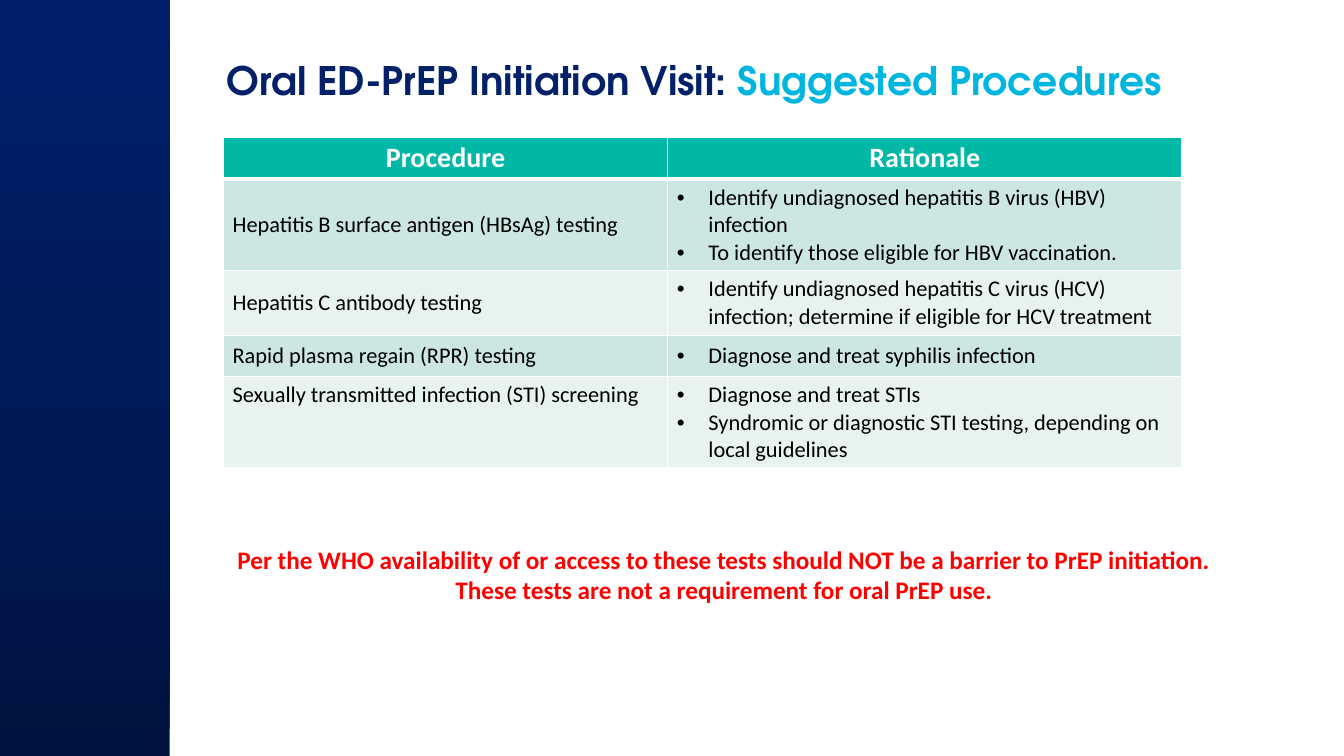
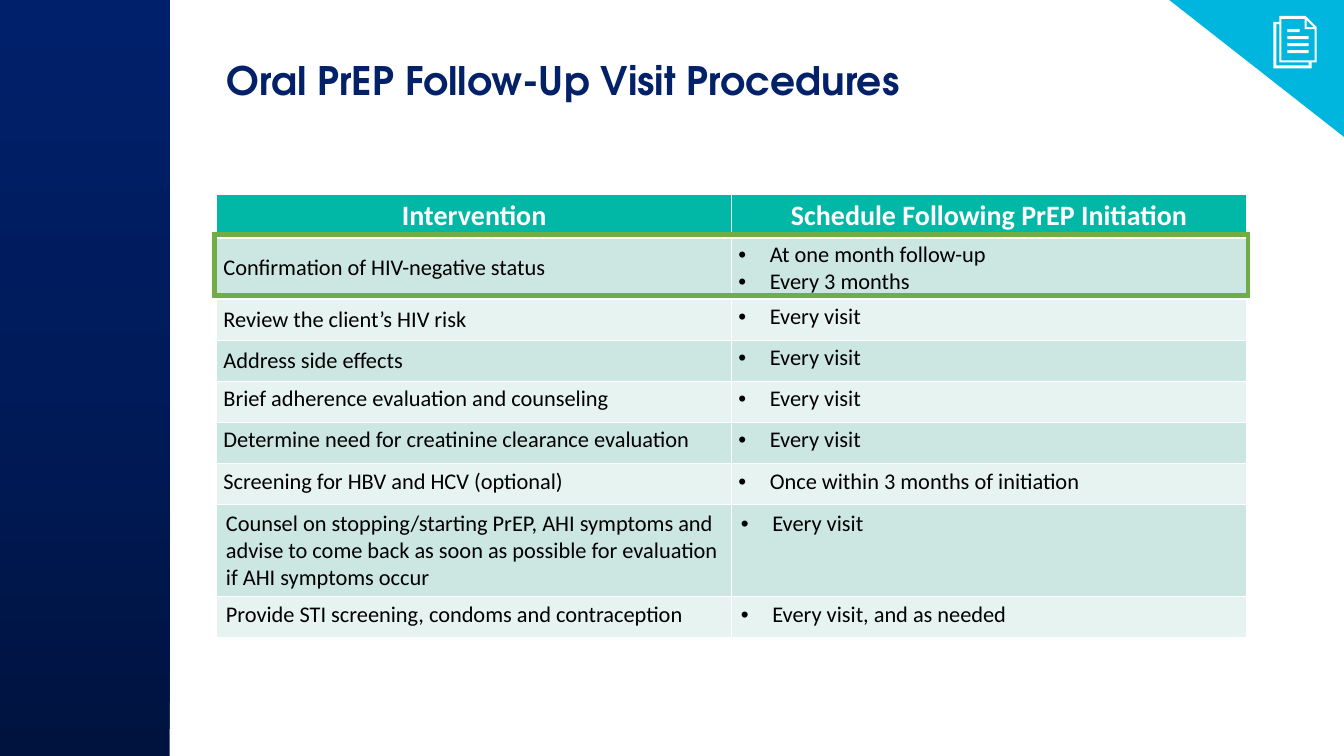
from copy import deepcopy
from dataclasses import dataclass

from lxml import etree
from pptx import Presentation
from pptx import util as u
from pptx.dml.color import RGBColor
from pptx.enum import shapes, text
from pptx.oxml.ns import qn

# The slide is a grid of 160 square columns by 90 rows.
COLUMNS, ROWS = 160, 90
CELL = u.Inches(7.5) / ROWS

COLORS = {
    "navy": "022169", "cyan": "00B5DE", "teal": "00B8A5", "white": "FFFFFF",
    "black": "000000", "red": "FF0000", "green": "70AD47",
    "band_odd": "CCE6E1", "band_even": "E7F3F0",
    "side_bottom": "00133F", "side_middle": "001B5A", "side_top": "00206B",
}
TITLE_FONT, BODY_FONT = "TeX Gyre Adventor", "Calibri"
TIGHT, ROOMY = (0.8, 0.5), (1.1, 0.6)
TOP, MIDDLE = text.MSO_ANCHOR.TOP, text.MSO_ANCHOR.MIDDLE
CENTER = text.PP_ALIGN.CENTER
HEADER_HEIGHT = LINE_ROW = 4.9
THREE_LINE_ROW = 10.9
BULLET_INDENT = 3.75


@dataclass
class Row:
    label: str
    bullets: list
    height: float = LINE_ROW
    label_anchor: text.MSO_ANCHOR = TOP
    bullet_anchor: text.MSO_ANCHOR = TOP
    inset: tuple = TIGHT


def grid(*counts):
    return [u.Emu(round(count * CELL)) for count in counts]


def color(name):
    return RGBColor.from_string(COLORS[name])


def add_run(paragraph, words, size, tint, bold=False, font=BODY_FONT):
    run = paragraph.add_run()
    run.text = words
    run.font.size, run.font.bold, run.font.name = u.Pt(size), bold, font
    run.font.color.rgb = color(tint)


def add_filled(slide, kind, box, tint):
    shape = slide.shapes.add_shape(kind, *grid(*box))
    shape.shadow.inherit = False
    shape.fill.solid()
    shape.fill.fore_color.rgb = color(tint)
    shape.line.fill.background()
    return shape


def add_text_frame(slide, box):
    frame = slide.shapes.add_textbox(*grid(*box)).text_frame
    frame.word_wrap = True
    return frame


def add_side_band(slide):
    band = add_filled(slide, shapes.MSO_SHAPE.RECTANGLE, (0, 0, 20.2, ROWS), "side_top")
    band.fill.gradient()
    band.fill.gradient_angle = 90
    stop_list = band.fill._xPr.find(".//" + qn("a:gsLst"))
    stop_list.insert(1, deepcopy(stop_list[0]))
    tints = ("side_bottom", "side_middle", "side_top")
    for i, (stop, tint) in enumerate(zip(band.fill.gradient_stops, tints)):
        stop.position = i / 2
        stop.color.rgb = color(tint)


def add_title(slide, *parts):
    paragraph = add_text_frame(slide, (25.8, 6.8, 120, 11)).paragraphs[0]
    paragraph.line_spacing = 0.9
    for words, tint in parts:
        add_run(paragraph, words, 28, tint, True, TITLE_FONT)


def start_slide(deck, *title_parts):
    slide = deck.slides.add_slide(deck.slide_layouts[6])
    add_side_band(slide)
    add_title(slide, *title_parts)
    return slide


def add_borders(cell, widths):
    """Draw white edges, widths in points: left, right, top, bottom."""
    properties = cell._tc.get_or_add_tcPr()
    for i, (side, width) in enumerate(zip("LRTB", widths)):
        line = etree.Element(qn(f"a:ln{side}"), w=str(u.Pt(width)))
        fill = etree.SubElement(line, qn("a:solidFill"))
        etree.SubElement(fill, qn("a:srgbClr"), val=COLORS["white"])
        properties.insert(i, line)


def style_cell(cell, tint, anchor, inset, widths):
    cell.fill.solid()
    cell.fill.fore_color.rgb = color(tint)
    cell.vertical_anchor = anchor
    cell.margin_left, cell.margin_top = grid(*inset)
    cell.margin_right, cell.margin_bottom = grid(*inset)
    add_borders(cell, widths)


def add_bullet(paragraph):
    properties = paragraph._p.get_or_add_pPr()
    indent, = grid(BULLET_INDENT)
    properties.set("marL", str(indent))
    properties.set("indent", str(-indent))
    etree.SubElement(properties, qn("a:buFont"), typeface="Arial")
    etree.SubElement(properties, qn("a:buChar"), char="•")


def fill_bullets(frame, bullets):
    for i, words in enumerate(bullets):
        paragraph = frame.add_paragraph() if i else frame.paragraphs[0]
        add_bullet(paragraph)
        add_run(paragraph, words, 16, "black")


def add_visit_table(slide, left, top, widths, headings, rows):
    heights = [HEADER_HEIGHT] + [row.height for row in rows]
    table = slide.shapes.add_table(
        len(heights), len(widths), *grid(left, top, sum(widths), sum(heights))).table
    for column, width in zip(table.columns, grid(*widths)):
        column.width = width
    for table_row, height in zip(table.rows, grid(*heights)):
        table_row.height = height
    for i, heading in enumerate(headings):
        cell = table.cell(0, i)
        style_cell(cell, "teal", MIDDLE, TIGHT, (1, 1, 1, 3))
        paragraph = cell.text_frame.paragraphs[0]
        paragraph.alignment = CENTER
        add_run(paragraph, heading, 20, "white", True)
    for i, row in enumerate(rows, 1):
        tint = "band_odd" if i % 2 else "band_even"
        edges = (1, 1, 3 if i == 1 else 1, 1)
        label, schedule = table.cell(i, 0), table.cell(i, 1)
        style_cell(label, tint, row.label_anchor, row.inset, edges)
        style_cell(schedule, tint, row.bullet_anchor, row.inset, edges)
        add_run(label.text_frame.paragraphs[0], row.label, 16, "black")
        fill_bullets(schedule.text_frame, row.bullets)


def add_note(slide, lines):
    frame = add_text_frame(slide, (26.6, 64.2, 119.2, 8.5))
    for i, words in enumerate(lines):
        paragraph = frame.add_paragraph() if i else frame.paragraphs[0]
        paragraph.alignment = CENTER
        add_run(paragraph, words, 18, "red", True)


def bar(right, top):
    return [(14, top), (right, top), (right, top + 3), (14, top + 3)]


def add_document_icon(slide):
    """Draw stacked pages; contours inside the outline alternate hole and fill."""
    outline = [(7, 0), (32, 0), (43, 11), (43, 46), (38, 46), (38, 52),
               (0, 52), (0, 6), (6, 6), (6, 0)]
    front_page = [(8, 3), (31, 3), (31, 13), (41, 13), (41, 44), (8, 44)]
    fold = [(33, 4), (40, 11), (33, 11)]
    back_page = [(3, 8), (6, 8), (6, 46), (35, 46), (35, 49), (3, 49)]
    text_lines = [bar(26 if i == 0 else 35, 13 + 7 * i) for i in range(4)]
    builder = slide.shapes.build_freeform(*outline[0], scale=u.Inches(0.01))
    builder.add_line_segments(outline[1:])
    for contour in [front_page, fold, back_page, *text_lines]:
        builder.move_to(*contour[0])
        builder.add_line_segments(contour[1:])
    icon = builder.convert_to_shape(*grid(151.6, 1.9))
    icon.shadow.inherit = False
    icon.fill.solid()
    icon.fill.fore_color.rgb = color("white")
    icon.line.fill.background()


def add_corner(slide):
    corner = add_filled(slide, shapes.MSO_SHAPE.RIGHT_TRIANGLE,
                        (139.2, 0, COLUMNS - 139.2, 16.3), "cyan")
    corner.rotation = 180
    add_document_icon(slide)


def add_highlight(slide):
    highlight = add_filled(slide, shapes.MSO_SHAPE.FRAME, (25.3, 27.7, 123.5, 7.7), "green")
    highlight.adjustments[0] = 0.06
    highlight.line.color.rgb = color("green")
    highlight.line.width = u.Pt(0.75)


def build_initiation(deck):
    slide = start_slide(deck, ("Oral ED-PrEP Initiation Visit: ", "navy"),
                        ("Suggested Procedures", "cyan"))
    centered = dict(label_anchor=MIDDLE, bullet_anchor=MIDDLE, inset=ROOMY)
    add_visit_table(slide, 26.6, 16.3, (52.9, 61.2), ("Procedure", "Rationale"), [
        Row("Hepatitis B surface antigen (HBsAg) testing",
            ["Identify undiagnosed hepatitis B virus (HBV) infection",
             "To identify those eligible for HBV vaccination."],
            THREE_LINE_ROW, **centered),
        Row("Hepatitis C antibody testing",
            ["Identify undiagnosed hepatitis C virus (HCV) infection; "
             "determine if eligible for HCV treatment"], 7.7, **centered),
        Row("Rapid plasma regain (RPR) testing",
            ["Diagnose and treat syphilis infection"], **centered),
        Row("Sexually transmitted infection (STI) screening",
            ["Diagnose and treat STIs",
             "Syndromic or diagnostic STI testing, depending on local guidelines"],
            THREE_LINE_ROW, bullet_anchor=MIDDLE, inset=ROOMY),
    ])
    add_note(slide, [
        "Per the WHO availability of or access to these tests should NOT be "
        "a barrier to PrEP initiation.",
        "These tests are not a requirement for oral PrEP use."])


def build_follow_up(deck):
    slide = start_slide(deck, ("Oral PrEP Follow-Up Visit Procedures", "navy"))
    add_corner(slide)
    every_visit = ["Every visit"]
    headings = ("Intervention", "Schedule Following PrEP Initiation")
    add_visit_table(slide, 25.8, 23.2, (61.3, 61.3), headings, [
        Row("Confirmation of HIV-negative status",
            ["At one month follow-up", "Every 3 months"], 7.3, MIDDLE),
        Row("Review the client’s HIV risk", every_visit, label_anchor=MIDDLE),
        Row("Address side effects", every_visit, label_anchor=MIDDLE),
        Row("Brief adherence evaluation and counseling", every_visit),
        Row("Determine need for creatinine clearance evaluation", every_visit),
        Row("Screening for HBV and HCV (optional)",
            ["Once within 3 months of initiation"]),
        Row("Counsel on stopping/starting PrEP, AHI symptoms and advise to come "
            "back as soon as possible for evaluation if AHI symptoms occur",
            every_visit, THREE_LINE_ROW, inset=ROOMY),
        Row("Provide STI screening, condoms and contraception",
            ["Every visit, and as needed"], inset=ROOMY),
    ])
    add_highlight(slide)


def main():
    deck = Presentation()
    deck.slide_width, deck.slide_height = grid(COLUMNS, ROWS)
    build_initiation(deck)
    build_follow_up(deck)
    deck.save("out.pptx")


if __name__ == "__main__":
    main()
